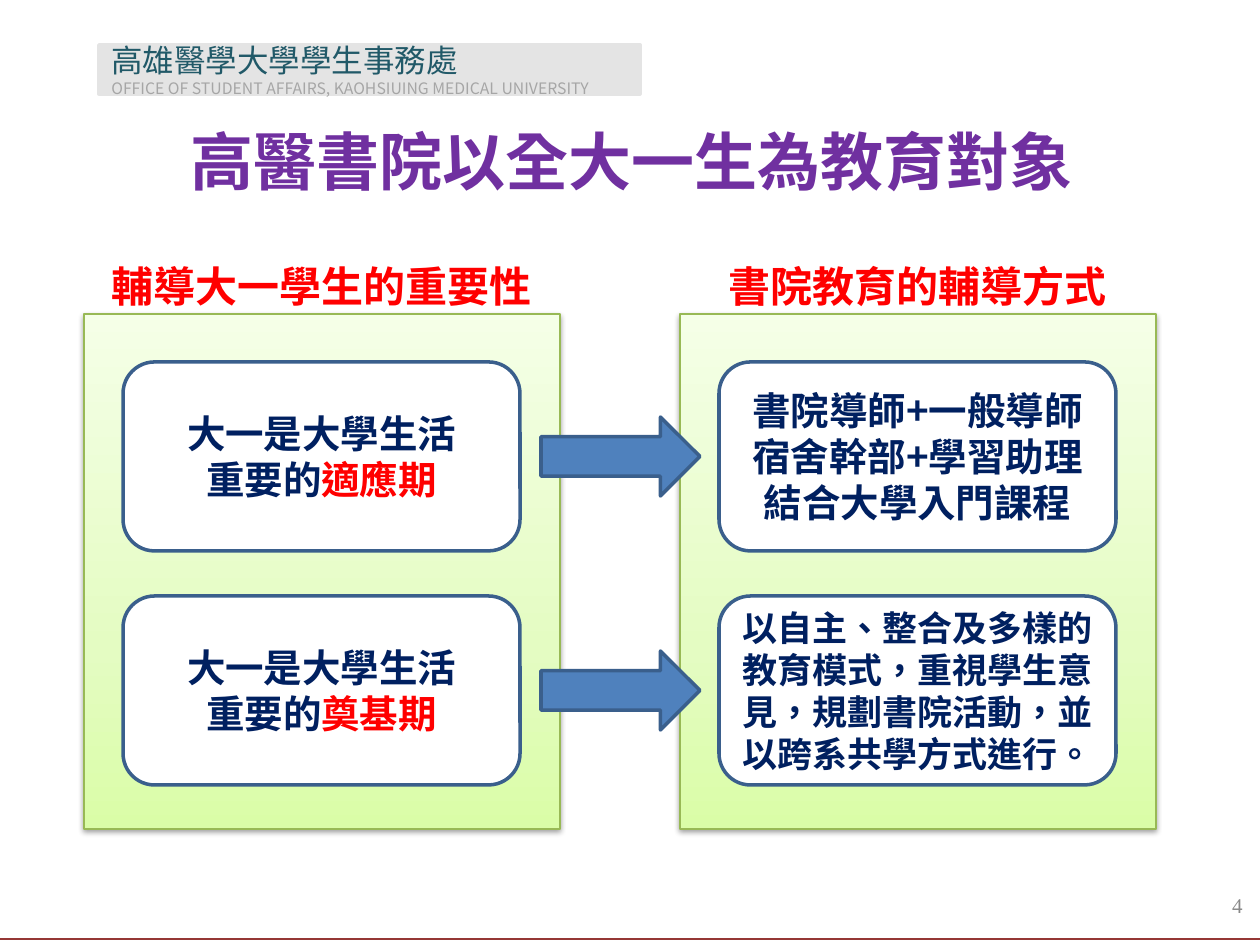
from dataclasses import dataclass
from typing import Optional

import lxml.etree
import pptx
import pptx.dml.color
import pptx.enum.shapes
import pptx.enum.text
import pptx.oxml
import pptx.oxml.ns
import pptx.util

PX_PER_INCH = 126
SHAPES = pptx.enum.shapes.MSO_SHAPE
ALIGN = pptx.enum.text.PP_ALIGN
ANCHOR = pptx.enum.text.MSO_ANCHOR
qn = pptx.oxml.ns.qn


@dataclass(frozen=True)
class Theme:
    sans: str = "Noto Sans CJK SC"
    serif: str = "Times New Roman"
    title: str = "7030A0"
    accent: str = "FF0000"
    body: str = "002060"
    office: str = "215968"
    office_english: str = "A6A6A6"
    band: str = "E4E4E4"
    rule: str = "953735"
    number: str = "898989"
    card: str = "FFFFFF"
    outline: str = "3A5F8C"
    arrow: str = "4F81BD"
    panel_line: str = "98B955"
    panel_stops: tuple = ((0, "DAFDA7"), (0.35, "E4FCC2"), (1, "F5FFE7"))
    title_size: int = 36
    heading_size: int = 24
    card_size: int = 22
    long_card_size: int = 20
    office_size: int = 18
    number_size: int = 12
    english_size: int = 9
    line_height: float = 1.2


THEME = Theme()


@dataclass(frozen=True)
class Box:
    left: int
    top: int
    width: int
    height: int


@dataclass(frozen=True)
class Run:
    text: str
    color: Optional[str] = None


@dataclass(frozen=True)
class Card:
    lines: tuple
    size: int = THEME.card_size


@dataclass(frozen=True)
class Column:
    left: int
    heading: str
    cards: tuple


COLUMNS = (
    Column(84, "輔導大一學生的重要性", tuple(
        Card(((Run("大一是大學生活"),), (Run("重要的"), Run(period, THEME.accent))))
        for period in ("適應期", "奠基期"))),
    Column(680, "書院教育的輔導方式", (
        Card(((Run("書院導師+一般導師"),), (Run("宿舍幹部+學習助理"),),
              (Run("結合大學入門課程"),))),
        Card(((Run("以自主、整合及多樣的教育模式，重視學生意見，規劃書院活動，並以跨系共學方式進行。"),),),
             THEME.long_card_size))),
)
CARD_TOPS = (362, 596)


def px(length: int) -> int:
    return round(length * 914400 / PX_PER_INCH)


def rgb(color: str) -> pptx.dml.color.RGBColor:
    return pptx.dml.color.RGBColor.from_string(color)


def place(box: Box) -> tuple:
    return px(box.left), px(box.top), px(box.width), px(box.height)


def write(shape, lines, *, size: int, color: str, font: str = THEME.sans, bold: bool = False,
          align=ALIGN.CENTER, anchor=ANCHOR.MIDDLE, more: bool = False) -> None:
    """Write lines of runs into a shape; more=True continues below its text."""
    frame = shape.text_frame
    frame.word_wrap = True
    frame.vertical_anchor = anchor
    for index, runs in enumerate(lines):
        paragraph = frame.add_paragraph() if more or index else frame.paragraphs[0]
        paragraph.alignment = align
        paragraph.line_spacing = pptx.util.Pt(size * THEME.line_height)
        for part in runs:
            run = paragraph.add_run()
            run.text = part.text
            run.font.size = pptx.util.Pt(size)
            run.font.bold = bold
            run.font.name = font
            run.font.color.rgb = rgb(part.color or color)
            # East Asian glyphs take their own typeface element
            properties = run._r.get_or_add_rPr()
            properties.set("lang", "zh-TW")
            latin = properties.find(qn("a:latin"))
            east_asian = lxml.etree.Element(qn("a:ea"), typeface=THEME.sans)
            latin.addnext(east_asian)


def add_text(slide, box: Box, text: str, **text_format) -> None:
    write(slide.shapes.add_textbox(*place(box)), ((Run(text),),), **text_format)


def add_block(slide, kind, box: Box, fill: str, line: str, weight: float = 2):
    block = slide.shapes.add_shape(kind, *place(box))
    block.shadow.inherit = False
    block.fill.solid()
    block.fill.fore_color.rgb = rgb(fill)
    block.line.color.rgb = rgb(line)
    block.line.width = pptx.util.Pt(weight)
    return block


def add_panel(slide, box: Box) -> None:
    panel = add_block(slide, SHAPES.RECTANGLE, box, THEME.card, THEME.panel_line, 0.75)
    # Three-stop gradient, rising from the bottom
    panel.fill.gradient()
    panel.fill.gradient_angle = 90
    properties = panel._element.spPr
    stops = properties.find(qn("a:gradFill")).find(qn("a:gsLst"))
    for stop in list(stops):
        stops.remove(stop)
    for position, color in THEME.panel_stops:
        stop = lxml.etree.SubElement(stops, qn("a:gs"), pos=str(round(position * 100000)))
        lxml.etree.SubElement(stop, qn("a:srgbClr"), val=color)
    # Soft shadow below
    shadow = lxml.etree.SubElement(
        properties.find(qn("a:effectLst")), qn("a:outerShdw"), blurRad=str(pptx.util.Pt(3.1)),
        dist=str(pptx.util.Pt(1.6)), dir="5400000", rotWithShape="0")
    shade = lxml.etree.SubElement(shadow, qn("a:srgbClr"), val="000000")
    lxml.etree.SubElement(shade, qn("a:alpha"), val="38000")


def add_column(slide, column: Column) -> None:
    add_panel(slide, Box(column.left, 314, 476, 515))
    add_text(slide, Box(column.left, 254, 476, 63), column.heading, size=THEME.heading_size,
             color=THEME.accent, bold=True, anchor=ANCHOR.TOP)
    for top, card in zip(CARD_TOPS, column.cards):
        block = add_block(slide, SHAPES.ROUNDED_RECTANGLE, Box(column.left + 39, top, 397, 189),
                          THEME.card, THEME.outline)
        write(block, card.lines, size=card.size, color=THEME.body, bold=True)


def add_frame(slide) -> None:
    # Bottom rule
    rule = slide.shapes.add_connector(pptx.enum.shapes.MSO_CONNECTOR.STRAIGHT,
                                      0, px(939), px(1260), px(939))
    rule.line.color.rgb = rgb(THEME.rule)
    rule.line.width = pptx.util.Pt(0.75)
    lxml.etree.SubElement(rule._element.spPr, qn("a:effectLst"))
    # Office band
    band = add_block(slide, SHAPES.RECTANGLE, Box(99, 45, 541, 49), THEME.band, THEME.band)
    write(band, ((Run("高雄醫學大學學生事務處"),),), size=THEME.office_size,
          color=THEME.office, align=ALIGN.LEFT)
    write(band, ((Run("OFFICE OF STUDENT AFFAIRS, KAOHSIUING MEDICAL UNIVERSITY"),),),
          size=THEME.english_size, color=THEME.office_english, align=ALIGN.LEFT, more=True)


def main() -> None:
    deck = pptx.Presentation()
    deck.slide_width, deck.slide_height = px(1260), px(945)
    slide = deck.slides.add_slide(deck.slide_layouts[6])
    add_frame(slide)
    # Title and page number
    add_text(slide, Box(105, 116, 1053, 89), "高醫書院以全大一生為教育對象",
             size=THEME.title_size, color=THEME.title, font=THEME.serif, bold=True)
    add_text(slide, Box(961, 880, 294, 50), "4", size=THEME.number_size,
             color=THEME.number, font=THEME.serif, align=ALIGN.RIGHT)
    # Columns, then the arrows that join their cards
    for column in COLUMNS:
        add_column(slide, column)
    for top in CARD_TOPS:
        add_block(slide, SHAPES.RIGHT_ARROW, Box(541, top + 55, 159, 79),
                  THEME.arrow, THEME.outline)
    deck.save("out.pptx")


if __name__ == "__main__":
    main()
